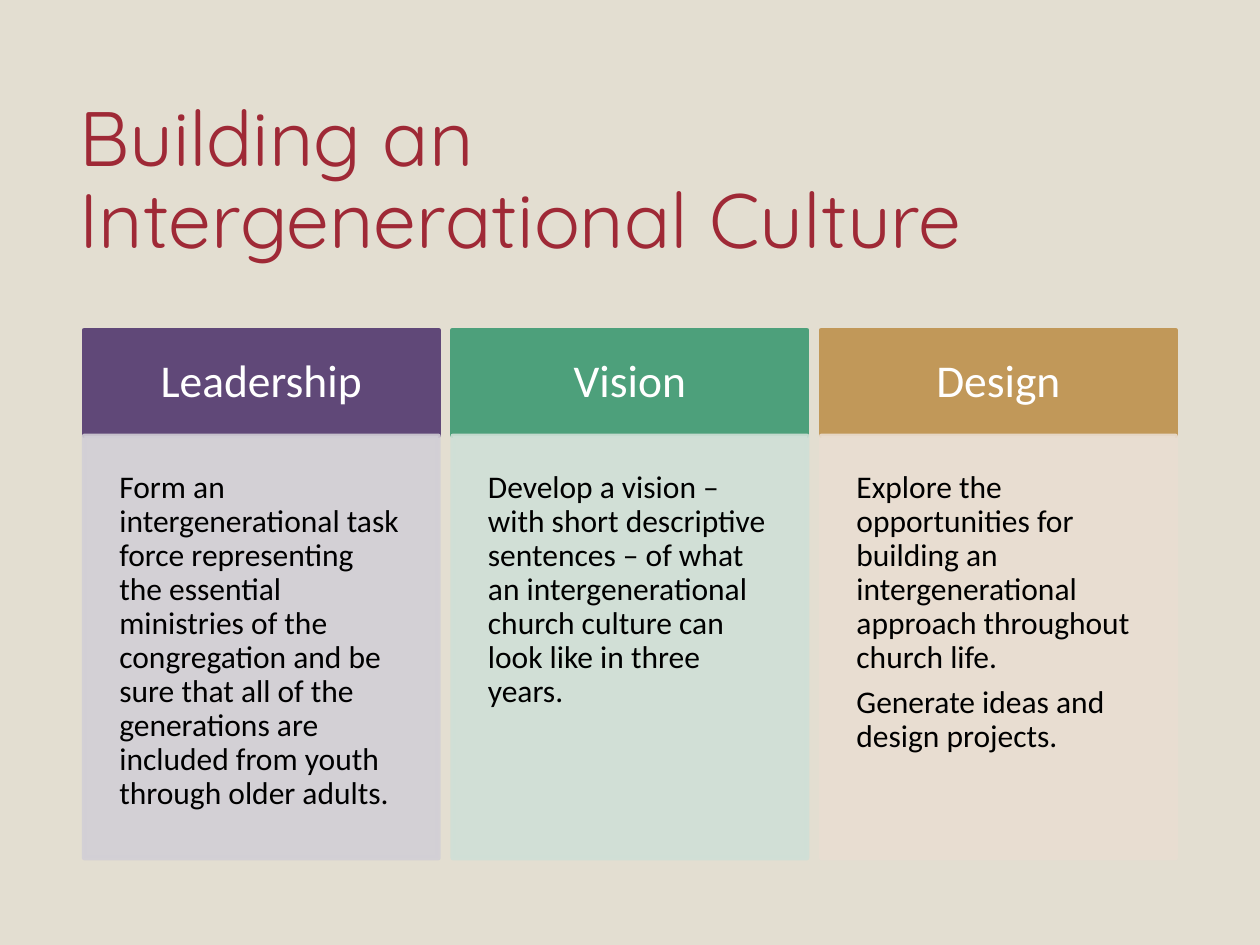
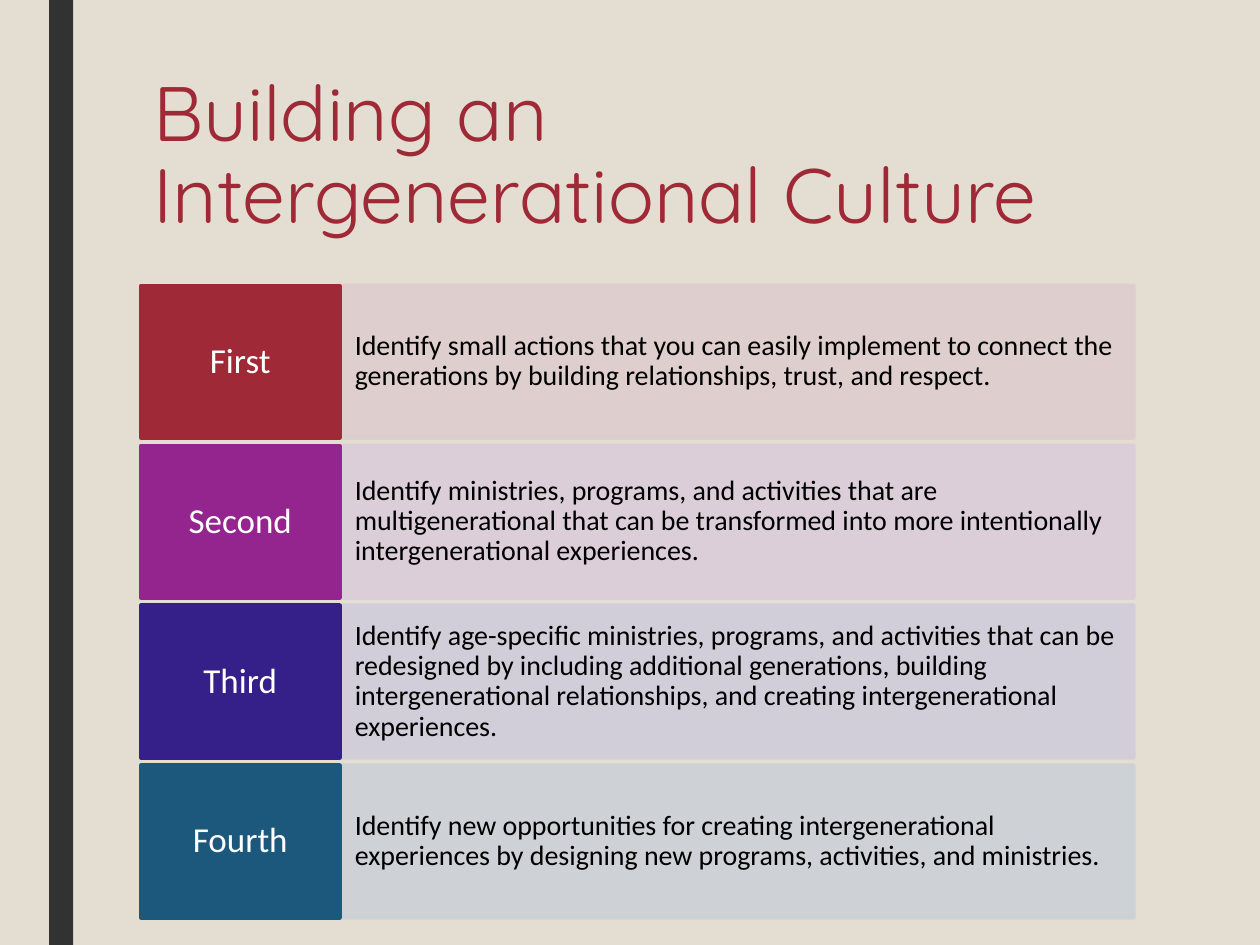
from pptx import Presentation
from pptx.dml.color import RGBColor
from pptx.enum.shapes import MSO_SHAPE
from pptx.enum.text import MSO_ANCHOR as ANCHOR, PP_ALIGN as ALIGN
from pptx.oxml.ns import qn
from pptx.util import Pt
from lxml import etree

WIDTH, HEIGHT = 720, 540
BACKGROUND, BAND, TITLE_COLOR = "E3DED1", "323232", "9F2936"
WHITE, BLACK = "FFFFFF", "000000"
TITLE_FONT, BODY_FONT = "Quicksand", "Calibri"
TITLE_LINES = ["Building an ", "Intergenerational Culture"]

COLUMNS = [
    ("Leadership", "604878", "D2CFD6", [
        "Form an intergenerational task force representing the essential ministries "
        "of the congregation and be sure that all of the generations are included "
        "from youth through older adults."]),
    ("Vision", "4DA07B", "D0E0D7", [
        "Develop a vision – with short descriptive sentences – of what an "
        "intergenerational church culture can look like in three years."]),
    ("Design", "C19859", "E9DDD1", [
        "Explore the opportunities for building an intergenerational approach "
        "throughout church life.",
        "Generate ideas and design projects."]),
]

STEPS = [
    ("First", "9F2936", "DFCDCE",
     "Identify small actions that you can easily implement to connect the "
     "generations by building relationships, trust, and respect."),
    ("Second", "94248E", "DCCDDA",
     "Identify ministries, programs, and activities that are multigenerational that "
     "can be transformed into more intentionally intergenerational experiences."),
    ("Third", "351F88", "D1CDDA",
     "Identify age-specific ministries, programs, and activities that can be "
     "redesigned by including additional generations, building intergenerational "
     "relationships, and creating intergenerational experiences."),
    ("Fourth", "1B587C", "CCD1D7",
     "Identify new opportunities for creating intergenerational experiences by "
     "designing new programs, activities, and ministries."),
]


def rgb(color):
    return RGBColor.from_string(color)


def add_run(p, text, size, font, color):
    r = p.add_run()
    r.text = text
    r.font.size = Pt(size)
    r.font.name = font
    r.font.color.rgb = rgb(color)


def set_frame(tf, insets, anchor):
    tf.word_wrap = True
    tf.vertical_anchor = anchor
    tf.margin_left = tf.margin_right = Pt(insets[0])
    tf.margin_top = tf.margin_bottom = Pt(insets[1])


def add_slide(prs, title_box):
    s = prs.slides.add_slide(prs.slide_layouts[6])
    s.background.fill.solid()
    s.background.fill.fore_color.rgb = rgb(BACKGROUND)
    tf = s.shapes.add_textbox(*map(Pt, title_box)).text_frame
    set_frame(tf, (7.2, 3.6), ANCHOR.TOP)
    p = tf.paragraphs[0]
    p.line_spacing = 0.89
    for i, line in enumerate(TITLE_LINES):
        if i:
            p.add_line_break()
        add_run(p, line, 44, TITLE_FONT, TITLE_COLOR)
    return s


def add_box(s, box, color):
    sp = s.shapes.add_shape(MSO_SHAPE.RECTANGLE, *map(Pt, box))
    sp.shadow.inherit = False
    sp.fill.solid()
    sp.fill.fore_color.rgb = rgb(color)
    return sp


def add_panel(s, box, color, paragraphs, size, insets, is_label=False, anchor=ANCHOR.MIDDLE):
    sp = add_box(s, box, color)
    sp.line.color.rgb = rgb(color)
    sp.line.width = Pt(2.75)
    if not is_label:
        for clr in sp._element.spPr.iter(qn("a:srgbClr")):
            etree.SubElement(clr, qn("a:alpha"), val="90000")
    tf = sp.text_frame
    set_frame(tf, insets, anchor)
    for i, text in enumerate(paragraphs):
        p = tf.add_paragraph() if i else tf.paragraphs[0]
        p.alignment = ALIGN.CENTER if is_label else ALIGN.LEFT
        p.line_spacing = 0.9
        p.space_after = Pt(0.35 * size)
        add_run(p, text, size, BODY_FONT, WHITE if is_label else BLACK)


def build_columns(prs):
    s = add_slide(prs, (38.2, 54, 643.6, 116.6))
    left, top, width, pitch = 48.2, 188.6, 202.3, 210.6
    head_h, body_h = 60.5, 241.2
    for i, (name, color, tint, paragraphs) in enumerate(COLUMNS):
        x = left + i * pitch
        add_panel(s, (x, top, width, head_h), color, [name], 26, (16, 16), is_label=True)
        add_panel(s, (x, top + head_h, width, body_h), tint, paragraphs, 18, (20, 20),
                  anchor=ANCHOR.TOP)


def build_steps(prs):
    s = add_slide(prs, (80.6, 39.6, 567.4, 116.6))
    add_box(s, (28.1, 0, 13.7, HEIGHT), BAND).line.fill.background()
    left, top, height, pitch = 80.6, 163.4, 86.6, 91.4
    label_w, text_w = 113.4, 453.6
    for i, (name, color, tint, text) in enumerate(STEPS):
        y = top + i * pitch
        add_panel(s, (left + label_w, y, text_w, height), tint, [text], 16, (8.8, 21.6))
        add_panel(s, (left, y, label_w, height), color, [name], 20, (6, 8.6), is_label=True)


def main():
    prs = Presentation()
    prs.slide_width, prs.slide_height = Pt(WIDTH), Pt(HEIGHT)
    build_columns(prs)
    build_steps(prs)
    prs.save("out.pptx")


if __name__ == "__main__":
    main()
